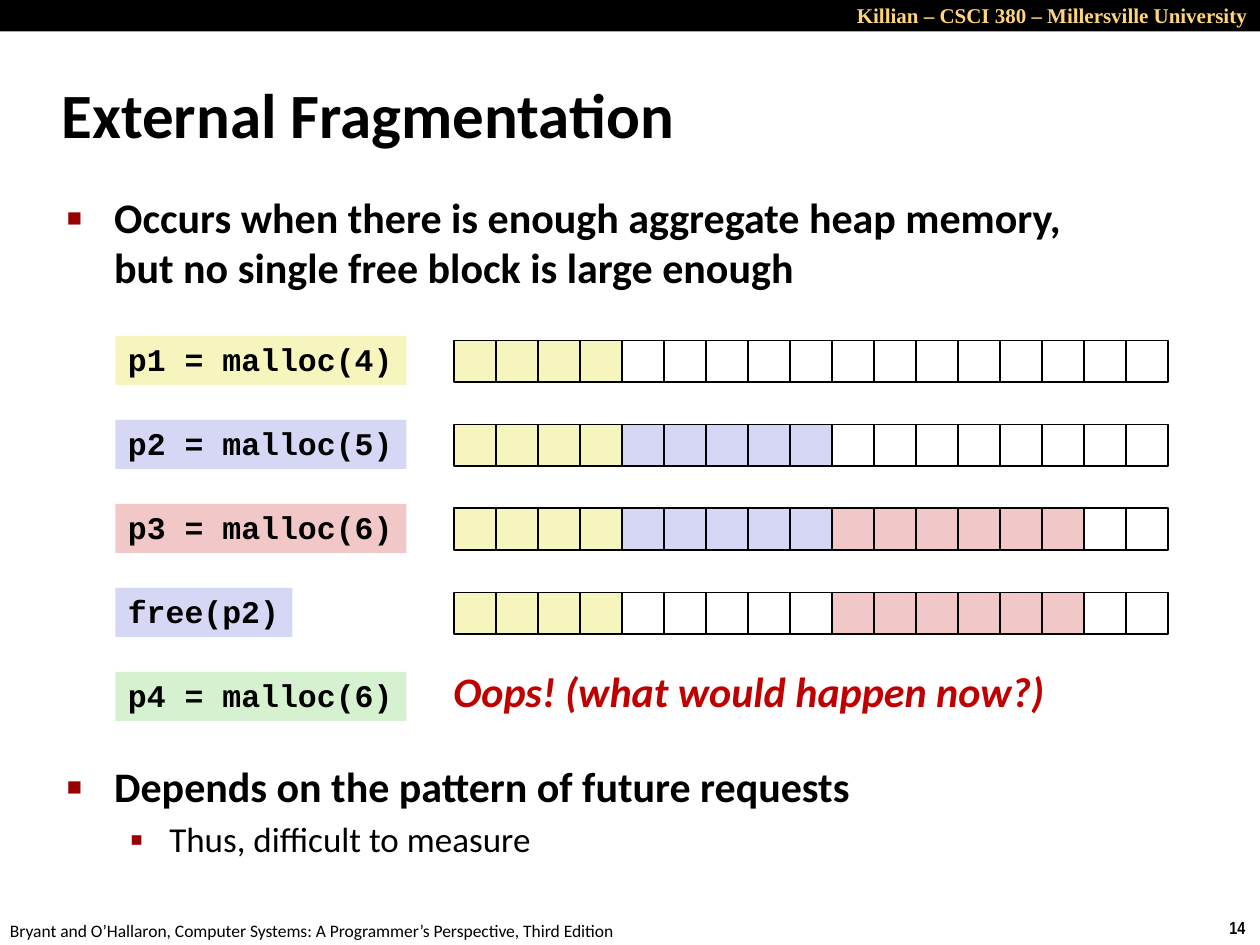
"""Build the slide on external fragmentation of a heap."""
import lxml.etree
import pptx
import pptx.dml.color
import pptx.enum.shapes
import pptx.enum.text
import pptx.oxml.ns
import pptx.util

Pt = pptx.util.Pt
RECTANGLE = pptx.enum.shapes.MSO_SHAPE.RECTANGLE
LEFT = pptx.enum.text.PP_ALIGN.LEFT
RIGHT = pptx.enum.text.PP_ALIGN.RIGHT


def paint(color_format, color):
    color_format.rgb = pptx.dml.color.RGBColor.from_string(color)


def write(paragraph, text, size, font="Calibri", color="000000", bold=False,
          italic=False, align=LEFT, line_spacing=None, space_before=0):
    paragraph.alignment = align
    paragraph.space_before = Pt(space_before)
    if line_spacing:
        paragraph.line_spacing = line_spacing
    run = paragraph.add_run()
    run.text = text
    run.font.size = Pt(size)
    run.font.name = font
    run.font.bold = bold
    run.font.italic = italic
    paint(run.font.color, color)


deck = pptx.Presentation()
deck.slide_width, deck.slide_height = Pt(720), Pt(540)
slide = deck.slides.add_slide(deck.slide_layouts[1])
shapes = slide.shapes

banner = shapes.add_shape(RECTANGLE, 0, 0, Pt(720), Pt(18))
banner.shadow.inherit = False
banner.fill.solid()
paint(banner.fill.fore_color, "000000")
banner.line.fill.background()

captions = [
    ((437.8, -2.2, 282.2, 21.8), True, "Killian – CSCI 380 – Millersville University",
     dict(size=12, font="Times New Roman", color="FFD579", bold=True, align=RIGHT)),
    ((695.5, 520.6, 24.5, 19.4), False, "14",
     dict(size=10, font="Arial Narrow", bold=True)),
    ((-1.4, 522, 365.8, 19.4), False,
     "Bryant and O’Hallaron, Computer Systems: A Programmer’s Perspective, Third Edition",
     dict(size=10)),
    ((252, 376.6, 355, 36), False, "Oops! (what would happen now?)",
     dict(size=24, color="C00000", bold=True, italic=True)),
]
for box, wrap, text, style in captions:
    caption = shapes.add_textbox(*map(Pt, box))
    caption.text_frame.word_wrap = wrap
    write(caption.text_frame.paragraphs[0], text, **style)

title = shapes.title
title.left, title.top, title.width, title.height = map(Pt, (28, 34.5, 598, 60))
title.text_frame.vertical_anchor = pptx.enum.text.MSO_ANCHOR.MIDDLE
write(title.text_frame.paragraphs[0], "External Fragmentation", 36, bold=True)

body = slide.placeholders[1]
body.left, body.top, body.width, body.height = map(Pt, (31, 107.3, 620, 392))
body.text_frame.auto_size = pptx.enum.text.MSO_AUTO_SIZE.NONE
points = [
    (0, "Occurs when there is enough aggregate heap memory, "
        "but no single free block is large enough", 24, 0, 27, 27, "■", 60),
    (0, "Depends on the pattern of future requests", 24, 268.5, 27, 27, "■", 60),
    (1, "Thus, difficult to measure", 20, 4, 58.5, 22.5, "▪", 110),
]
for index, (level, text, size, gap, margin, hang, bullet, percent) in enumerate(points):
    point = body.text_frame.add_paragraph() if index else body.text_frame.paragraphs[0]
    point.level = level
    write(point, text, size, bold=level == 0, line_spacing=0.98, space_before=gap)
    properties = point._p.get_or_add_pPr()
    properties.set("marL", str(Pt(margin)))
    properties.set("indent", str(-Pt(hang)))
    qn = pptx.oxml.ns.qn
    bullet_color = lxml.etree.SubElement(properties, qn("a:buClr"))
    lxml.etree.SubElement(bullet_color, qn("a:srgbClr"), val="990000")
    lxml.etree.SubElement(properties, qn("a:buSzPct"), val=str(percent * 1000))
    lxml.etree.SubElement(properties, qn("a:buChar"), char=bullet)

yellow, blue, red, green, free = "F6F5BD", "D6D6F5", "F1C7C7", "D5F1CF", "FFFFFF"
steps = [
    ("p1 = malloc(4)", yellow, [(yellow, 4), (free, 13)]),
    ("p2 = malloc(5)", blue, [(yellow, 4), (blue, 5), (free, 8)]),
    ("p3 = malloc(6)", red, [(yellow, 4), (blue, 5), (red, 6), (free, 2)]),
    ("free(p2)", blue, [(yellow, 4), (free, 5), (red, 6), (free, 2)]),
    ("p4 = malloc(6)", green, []),
]
row_pitch, word_size = 48, 24
for row, (call, color, blocks) in enumerate(steps):
    row_top = 192 + row * row_pitch
    label_width = 14.4 + 10.85 * len(call)
    label = shapes.add_shape(RECTANGLE, Pt(66), Pt(row_top), Pt(label_width), Pt(28))
    label.shadow.inherit = False
    label.fill.solid()
    paint(label.fill.fore_color, color)
    label.line.fill.background()
    label.text_frame.word_wrap = False
    write(label.text_frame.paragraphs[0], call, 18, font="Courier New",
          bold=True, line_spacing=0.94)

    words = [block_color for block_color, count in blocks for _ in range(count)]
    if words:
        heap = shapes.add_group_shape()
    for column, word_color in enumerate(words):
        word = heap.shapes.add_shape(RECTANGLE, Pt(259.5 + column * word_size),
                                     Pt(row_top + 2.5), Pt(word_size), Pt(word_size))
        word.shadow.inherit = False
        word.fill.solid()
        paint(word.fill.fore_color, word_color)
        word.line.width = Pt(1)
        paint(word.line.color, "000000")

deck.save("out.pptx")
